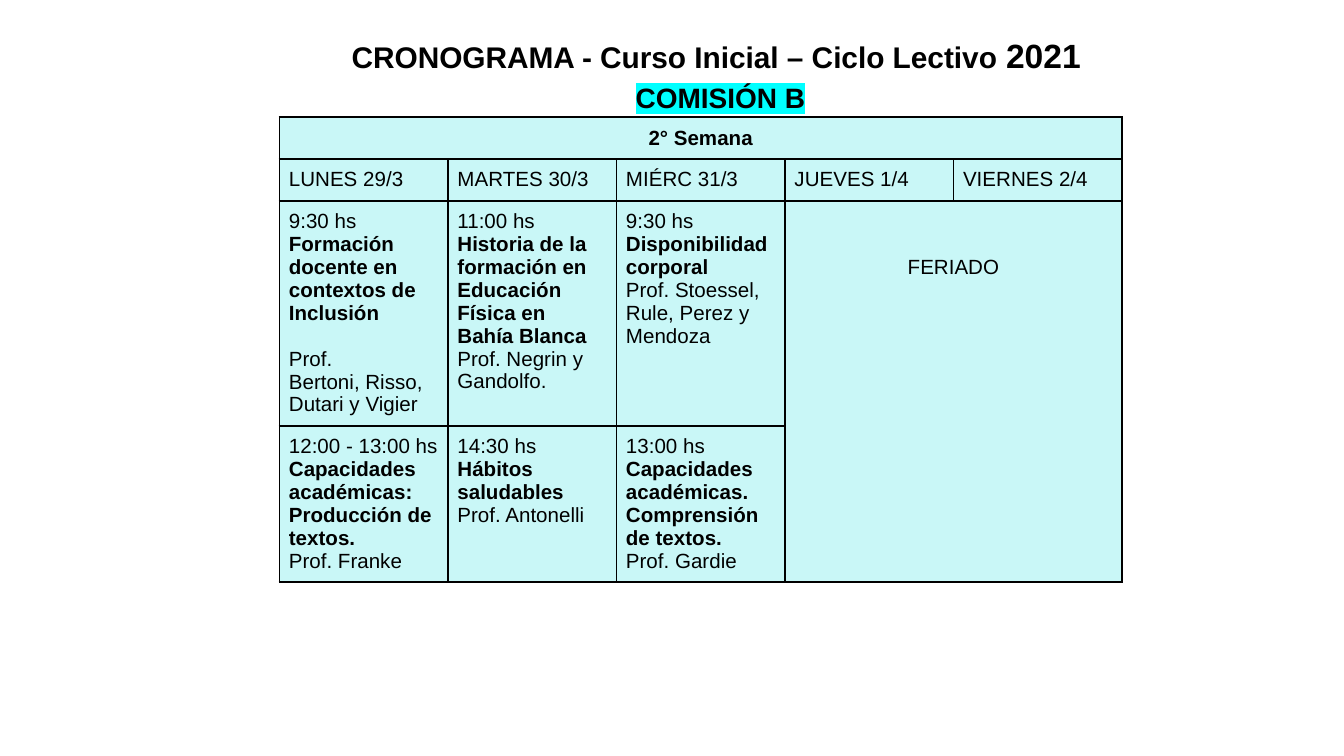
"""Build the weekly course timetable slide."""
import dataclasses

import pptx
import pptx.dml.color
import pptx.enum.text
import pptx.oxml
import pptx.oxml.ns
import pptx.util

Cm = pptx.util.Cm
Pt = pptx.util.Pt
CENTER = pptx.enum.text.PP_ALIGN.CENTER


@dataclasses.dataclass(frozen=True)
class Theme:
    font: str = "Arial"
    ink: str = "000000"
    fill: str = "C9F7F7"
    mark: str = "00FFFF"
    head: float = 16
    year: float = 18
    group: float = 15
    body: float = 11
    line: float = 1


THEME = Theme()
WIDTH = 3.185
ROWS = (0.78, 0.78, 4.24, 2.94)
DAYS = ("LUNES 29/3", "MARTES 30/3", "MIÉRC 31/3", "JUEVES 1/4", "VIERNES 2/4")
PLAN = (
    (
        ("9:30 hs", "Formación docente en contextos de Inclusión",
         "Prof.", "Bertoni, Risso, Dutari y Vigier"),
        ("11:00 hs", "Historia de la formación en Educación Física en Bahía Blanca",
         "Prof. Negrin y Gandolfo."),
        ("9:30 hs", "Disponibilidad corporal", "Prof. Stoessel, Rule, Perez y Mendoza"),
    ),
    (
        ("12:00 - 13:00 hs", "Capacidades académicas: Producción de textos.",
         "Prof. Franke"),
        ("14:30 hs", "Hábitos saludables", "Prof. Antonelli"),
        ("13:00 hs", "Capacidades académicas. Comprensión de textos.",
         "Prof. Gardie"),
    ),
)


def color(code):
    return pptx.dml.color.RGBColor.from_string(code)


def style(run, size, bold=False):
    font = run.font
    font.name, font.size, font.bold = THEME.font, Pt(size), bold
    font.color.rgb = color(THEME.ink)


def mark(run):
    space = pptx.oxml.ns.nsdecls("a")
    glow = pptx.oxml.parse_xml(
        f'<a:highlight {space}><a:srgbClr val="{THEME.mark}"/></a:highlight>')
    fill = run.font._element.find(pptx.oxml.ns.qn("a:solidFill"))
    fill.addnext(glow)


def frame(cell):
    space = pptx.oxml.ns.nsdecls("a")
    props = cell._tc.get_or_add_tcPr()
    for side in "LRTB":
        props.append(pptx.oxml.parse_xml(
            f'<a:ln{side} {space} w="{Pt(THEME.line)}"><a:solidFill>'
            f'<a:srgbClr val="{THEME.ink}"/></a:solidFill></a:ln{side}>'))
    cell.fill.solid()
    cell.fill.fore_color.rgb = color(THEME.fill)
    cell.margin_left = cell.margin_right = Cm(0.18)
    cell.margin_top = cell.margin_bottom = Cm(0.18)


def write(cell, lines, bold=None, align=None):
    cell.text_frame.text = "\n".join(lines)
    for index, para in enumerate(cell.text_frame.paragraphs):
        para.alignment = align
        for run in para.runs:
            style(run, THEME.body, index == bold)


def add_title(slide):
    box = slide.shapes.add_textbox(Cm(5.46), Cm(0.3), Cm(16.31), Cm(2.13))
    text = box.text_frame
    text.word_wrap = True
    text.margin_left = text.margin_right = Cm(0.25)
    text.margin_top = text.margin_bottom = Cm(0.25)
    text.text = "CRONOGRAMA - Curso Inicial – Ciclo Lectivo \nCOMISIÓN B"
    top, group = text.paragraphs
    for para in (top, group):
        para.alignment = CENTER
        para.line_spacing = 1.15
    style(top.runs[0], THEME.head, True)
    for words, size, bold in (("2021", THEME.year, True), (" ", THEME.head, False)):
        run = top.add_run()
        run.text = words
        style(run, size, bold)
    style(group.runs[0], THEME.group, True)
    mark(group.runs[0])


def add_grid(slide):
    count = len(DAYS)
    shape = slide.shapes.add_table(
        len(ROWS), count, Cm(5.28), Cm(2.21), Cm(WIDTH * count), Cm(sum(ROWS)))
    grid = shape.table
    grid.first_row = grid.horz_banding = False
    for col in grid.columns:
        col.width = Cm(WIDTH)
    for row, height in zip(grid.rows, ROWS):
        row.height = Cm(height)
    for cell in grid.iter_cells():
        frame(cell)
    grid.cell(0, 0).merge(grid.cell(0, count - 1))
    write(grid.cell(0, 0), ["2° Semana"], 0, CENTER)
    for col, day in enumerate(DAYS):
        write(grid.cell(1, col), [day])
    for row, slots in enumerate(PLAN, 2):
        for col, lines in enumerate(slots):
            write(grid.cell(row, col), lines, 1)
    grid.cell(2, 0).text_frame.paragraphs[2].space_before = Pt(12.3)
    rest = grid.cell(2, 3)
    rest.merge(grid.cell(3, 4))
    write(rest, ["FERIADO"], align=CENTER)
    rest.margin_top = Cm(1.05)


def main():
    deck = pptx.Presentation()
    deck.slide_width, deck.slide_height = Cm(25.4), Cm(14.29)
    slide = deck.slides.add_slide(deck.slide_layouts[6])
    add_grid(slide)
    add_title(slide)
    deck.save("out.pptx")


if __name__ == "__main__":
    main()
